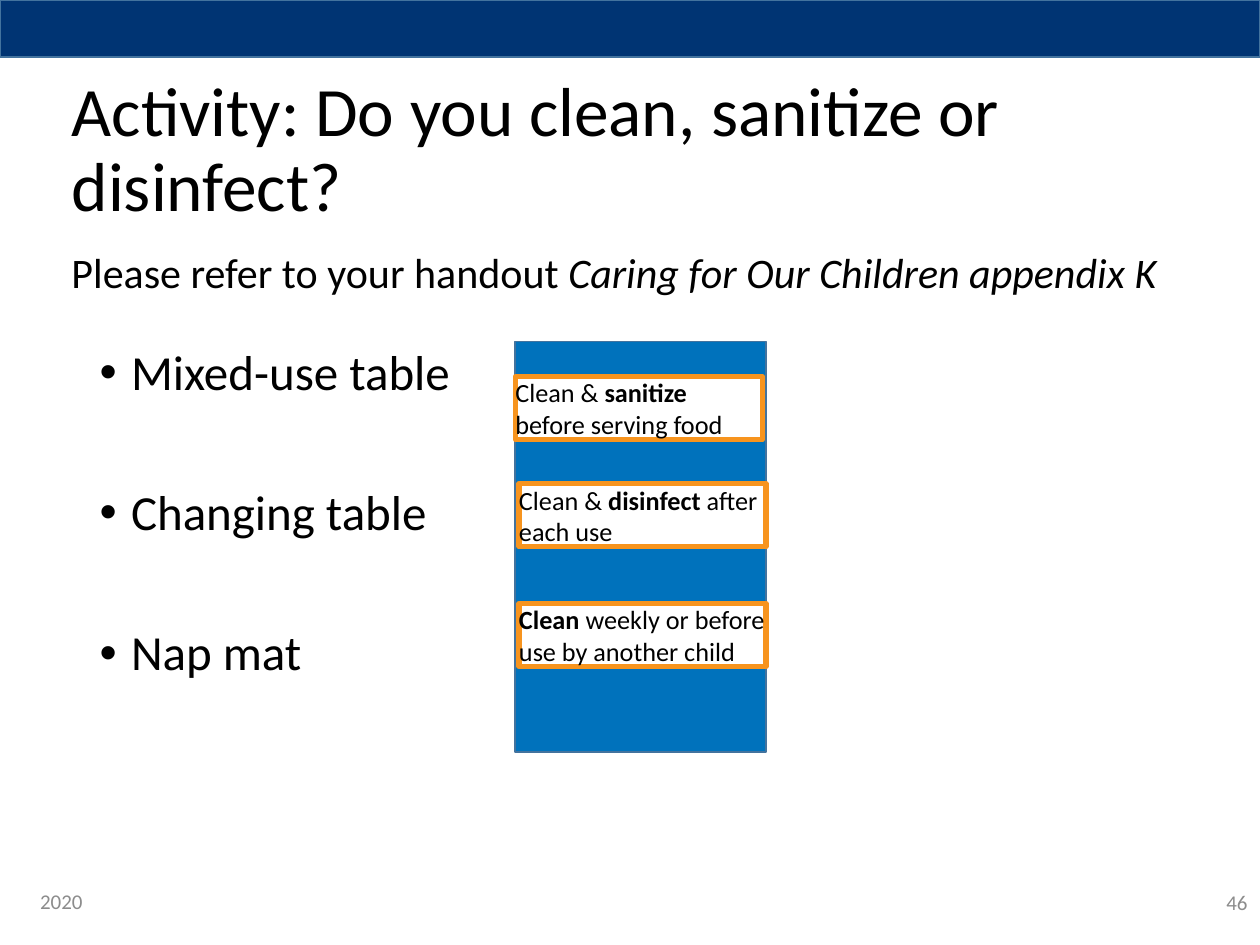
import pptx
import pptx.dml.color
import pptx.enum.shapes
import pptx.enum.text
import pptx.oxml.ns
import pptx.util
from lxml import etree

Pt = pptx.util.Pt
Anchor = pptx.enum.text.MSO_ANCHOR
Align = pptx.enum.text.PP_ALIGN
AutoSize = pptx.enum.text.MSO_AUTO_SIZE

# Content: each run is (text, style)
TITLE = "Activity: Do you clean, sanitize or disinfect?"
ITEMS = ["Mixed-use table", "Changing table", "Nap mat"]
INSTRUCTION = [("Please refer to your handout ", ""),
               ("Caring for Our Children appendix K", "italic")]
# Answers: left, top, runs
ANSWERS = [
    (294.5, 215.3, [("Clean & ", ""), ("sanitize ", "bold"), ("before serving food", "")]),
    (296.6, 276.5, [("Clean & ", ""), ("disinfect", "bold"), (" after each use", "")]),
    (296.6, 344.9, [("Clean", "bold"), (" weekly or before use by another child", "")]),
]
# Footers: text, left, top, alignment
FOOTERS = [("2020", 15.8, 500.4, Align.LEFT), ("46", 558, 501.1, Align.RIGHT)]

THEME = {
    "font": "Calibri",
    "text": "000000", "muted": "8C8C8C", "paper": "FFFFFF",
    "banner": "003473", "panel": "0072BC", "edge": "43739E", "accent": "F7941E",
    "title": 39.6, "item": 28, "instruction": 24, "answer": 15, "footer": 12,
}
SLIDE_WIDTH, SLIDE_HEIGHT = 720, 540
ANSWER_SIZE = (141.1, 36)
ITEM_GAP = 50


def color(name):
    return pptx.dml.color.RGBColor.from_string(THEME[name])


def place(shape, left, top, width, height):
    shape.left, shape.top, shape.width, shape.height = map(Pt, (left, top, width, height))


def style(font, size, ink="text"):
    font.name = THEME["font"]
    font.size = Pt(THEME[size])
    font.color.rgb = color(ink)


def write_runs(paragraph, runs, size):
    for text, emphasis in runs:
        run = paragraph.add_run()
        run.text = text
        style(run.font, size)
        run.font.bold = emphasis == "bold"
        run.font.italic = emphasis == "italic"


def add_box(slide, bounds, fill, line, line_width):
    shape = slide.shapes.add_shape(pptx.enum.shapes.MSO_SHAPE.RECTANGLE, *map(Pt, bounds))
    shape.shadow.inherit = False
    shape.fill.solid()
    shape.fill.fore_color.rgb = color(fill)
    shape.line.color.rgb = color(line)
    shape.line.width = Pt(line_width)
    return shape


def add_text(slide, *bounds):
    frame = slide.shapes.add_textbox(*map(Pt, bounds)).text_frame
    frame.word_wrap = True
    return frame


def add_bullet(paragraph, indent):
    properties = paragraph._p.get_or_add_pPr()
    properties.set("marL", str(Pt(indent)))
    properties.set("indent", str(-Pt(indent)))
    for tag, attribute, value in (("a:buFont", "typeface", "Arial"), ("a:buChar", "char", "•")):
        etree.SubElement(properties, pptx.oxml.ns.qn(tag)).set(attribute, value)


def main():
    presentation = pptx.Presentation()
    presentation.slide_width, presentation.slide_height = Pt(SLIDE_WIDTH), Pt(SLIDE_HEIGHT)
    slide = presentation.slides.add_slide(presentation.slide_layouts[1])

    # Title
    title = slide.shapes.title
    place(title, 33.8, 38.9, 643.7, 95.8)
    frame = title.text_frame
    frame.text = TITLE
    frame.auto_size = AutoSize.NONE
    frame.vertical_anchor = Anchor.MIDDLE
    paragraph = frame.paragraphs[0]
    paragraph.alignment = Align.LEFT
    paragraph.line_spacing = 0.9
    style(paragraph.runs[0].font, "title")

    # Surfaces to clean
    body = slide.placeholders[1]
    place(body, 49.7, 195.1, 306, 291.6)
    frame = body.text_frame
    frame.text = "\n".join(ITEMS)
    frame.auto_size = AutoSize.NONE
    for index, paragraph in enumerate(frame.paragraphs):
        add_bullet(paragraph, 18)
        paragraph.line_spacing = 0.9
        paragraph.space_before = Pt(ITEM_GAP if index else 0)
        style(paragraph.runs[0].font, "item")

    # Instruction
    frame = add_text(slide, 33.8, 137.5, 643, 26.6)
    write_runs(frame.paragraphs[0], INSTRUCTION, "instruction")

    # Answers on their panel
    add_box(slide, (294.5, 195.1, 143.3, 234.7), "panel", "edge", 1)
    for left, top, runs in ANSWERS:
        frame = add_box(slide, (left, top, *ANSWER_SIZE), "paper", "accent", 3).text_frame
        frame.margin_left = frame.margin_top = frame.margin_right = frame.margin_bottom = 0
        frame.word_wrap = True
        frame.auto_size = AutoSize.SHAPE_TO_FIT_TEXT
        frame.vertical_anchor = Anchor.TOP
        frame.paragraphs[0].alignment = Align.LEFT
        write_runs(frame.paragraphs[0], runs, "answer")

    # Year and page number
    for text, left, top, alignment in FOOTERS:
        frame = add_text(slide, left, top, 162, 28.8)
        frame.text = text
        frame.vertical_anchor = Anchor.MIDDLE
        frame.paragraphs[0].alignment = alignment
        style(frame.paragraphs[0].runs[0].font, "footer", "muted")

    # Top banner
    add_box(slide, (0, 0, SLIDE_WIDTH, 32.4), "banner", "edge", 1)

    presentation.save("out.pptx")


if __name__ == "__main__":
    main()
